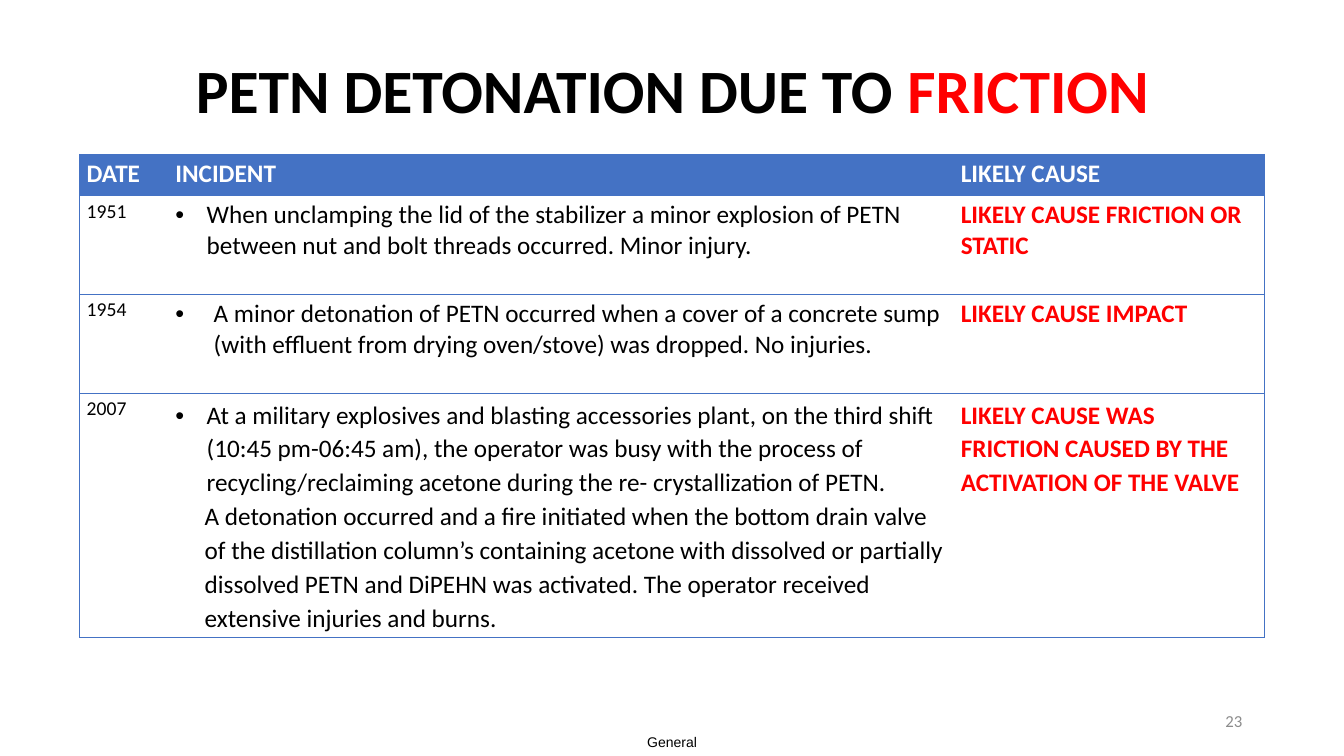
from lxml.etree import SubElement
from pptx import Presentation
from pptx.dml.color import RGBColor
from pptx.enum.text import MSO_ANCHOR, PP_ALIGN
from pptx.oxml.ns import qn
from pptx.util import Inches, Pt

BLACK = RGBColor(0x00, 0x00, 0x00)
WHITE = RGBColor(0xFF, 0xFF, 0xFF)
RED = RGBColor(0xFF, 0x00, 0x00)
BLUE = RGBColor(0x44, 0x72, 0xC4)
GRAY = RGBColor(0x8C, 0x8C, 0x8C)

TITLE = [("PETN DETONATION DUE TO ", BLACK), ("FRICTION", RED)]
HEADERS = ["DATE", "INCIDENT", "LIKELY CAUSE"]
INCIDENTS = [
    {
        "date": "1951",
        "incident": ["When unclamping the lid of the stabilizer a minor explosion of PETN "
                     "between nut and bolt threads occurred. Minor injury."],
        "cause": "LIKELY CAUSE FRICTION OR STATIC",
        "indent": 0.31, "spacing": 1.0, "height": 0.98,
    },
    {
        "date": "1954",
        "incident": ["A minor detonation of PETN occurred when a cover of a concrete sump "
                     "(with effluent from drying oven/stove) was dropped. No injuries."],
        "cause": "LIKELY CAUSE IMPACT",
        "indent": 0.38, "spacing": 1.0, "height": 0.98,
    },
    {
        "date": "2007",
        "incident": ["At a military explosives and blasting accessories plant, on the third shift "
                     "(10:45 pm-06:45 am), the operator was busy with the process of "
                     "recycling/reclaiming acetone during the re- crystallization of PETN.",
                     "A detonation occurred and a fire initiated when the bottom drain valve of the "
                     "distillation column’s containing acetone with dissolved or partially dissolved "
                     "PETN and DiPEHN was activated. The operator received extensive injuries and burns."],
        "cause": "LIKELY CAUSE WAS FRICTION CAUSED BY THE ACTIVATION OF THE VALVE",
        "indent": 0.31, "spacing": 1.1, "height": 2.42,
    },
]
COLUMN_WIDTHS = [0.88, 7.79, 3.08]
HEADER_HEIGHT = 0.41
CONTINUATION_INDENT = 0.29


def set_font(paragraph, size, color, bold=False, name="Calibri"):
    """Format every run of a paragraph alike."""
    font = paragraph.font
    font.name, font.size, font.bold = name, Pt(size), bold
    font.color.rgb = color


def set_indent(paragraph, left, bullet):
    """Indent a paragraph, hanging it from a bullet if asked."""
    properties = paragraph._p.get_or_add_pPr()
    properties.set("marL", str(Inches(left)))
    properties.set("indent", str(-Inches(left) if bullet else 0))
    if bullet:
        SubElement(properties, qn("a:buFont"), typeface="Arial")
        SubElement(properties, qn("a:buChar"), char="•")


def set_borders(cell, first, last):
    """Rule the top and bottom of a cell, and its outer sides only."""
    properties = cell._tc.get_or_add_tcPr()
    for side, visible in (("L", first), ("R", last), ("T", True), ("B", True)):
        line = SubElement(properties, qn(f"a:ln{side}"), w=str(Pt(0.5)))
        if visible:
            fill = SubElement(line, qn("a:solidFill"))
            SubElement(fill, qn("a:srgbClr"), val=str(BLUE))
        else:
            SubElement(line, qn("a:noFill"))


def add_incident_table(slide):
    """Add the table of incidents."""
    heights = [HEADER_HEIGHT] + [incident["height"] for incident in INCIDENTS]
    frame = slide.shapes.add_table(len(heights), len(COLUMN_WIDTHS), Inches(0.79), Inches(1.53),
                                   Inches(sum(COLUMN_WIDTHS)), Inches(sum(heights)))
    table = frame.table
    table.horz_banding = False
    for column, width in zip(table.columns, COLUMN_WIDTHS):
        column.width = Inches(width)
    for row_index, (row, height) in enumerate(zip(table.rows, heights)):
        row.height = Inches(height)
        for column_index, cell in enumerate(row.cells):
            cell.margin_left = cell.margin_right = Inches(0.07)
            cell.margin_top = cell.margin_bottom = Inches(0.04)
            set_borders(cell, column_index == 0, column_index == len(COLUMN_WIDTHS) - 1)
            cell.fill.solid()
            cell.fill.fore_color.rgb = WHITE if row_index else BLUE

    for column_index, header in enumerate(HEADERS):
        cell = table.cell(0, column_index)
        cell.text = header
        set_font(cell.text_frame.paragraphs[0], 18, WHITE, bold=True)

    for row_index, incident in enumerate(INCIDENTS, start=1):
        date, description, cause = table.rows[row_index].cells
        date.text = incident["date"]
        set_font(date.text_frame.paragraphs[0], 14, BLACK)
        description.text = "\n".join(incident["incident"])
        for index, paragraph in enumerate(description.text_frame.paragraphs):
            paragraph.line_spacing = incident["spacing"]
            set_indent(paragraph, CONTINUATION_INDENT if index else incident["indent"], index == 0)
            set_font(paragraph, 18, BLACK)
        cause.text = incident["cause"]
        paragraph = cause.text_frame.paragraphs[0]
        paragraph.line_spacing = incident["spacing"]
        set_font(paragraph, 18, RED, bold=True)


def add_label(slide, text, box, margin, alignment, size, color, name):
    """Add a one-line label at the foot of the slide."""
    text_frame = slide.shapes.add_textbox(*map(Inches, box)).text_frame
    text_frame.word_wrap = True
    text_frame.vertical_anchor = MSO_ANCHOR.MIDDLE
    text_frame.margin_left = text_frame.margin_right = Inches(margin)
    text_frame.margin_top = text_frame.margin_bottom = Inches(margin / 2)
    text_frame.text = text
    paragraph = text_frame.paragraphs[0]
    paragraph.alignment = alignment
    set_font(paragraph, size, color, name=name)


def main():
    """Build the slide on PETN detonations and save it."""
    presentation = Presentation()
    presentation.slide_width, presentation.slide_height = Inches(13.33), Inches(7.5)
    slide = presentation.slides.add_slide(presentation.slide_layouts[5])

    add_label(slide, "General", (6.27, 7.23, 0.79, 0.27), 0, PP_ALIGN.CENTER, 10, BLACK, "Arial")

    title = slide.shapes.title
    title.left, title.top, title.width, title.height = map(Inches, (1.67, 0.3, 10, 1.25))
    title.text_frame.vertical_anchor = MSO_ANCHOR.MIDDLE
    paragraph = title.text_frame.paragraphs[0]
    paragraph.alignment = PP_ALIGN.CENTER
    paragraph.line_spacing = 0.9
    set_font(paragraph, 44, BLACK, bold=True)
    for text, color in TITLE:
        run = paragraph.add_run()
        run.text = text
        run.font.color.rgb = color

    add_label(slide, "23", (9.42, 6.95, 3, 0.4), 0.1, PP_ALIGN.RIGHT, 12, GRAY, "Calibri")
    add_incident_table(slide)
    presentation.save("out.pptx")


if __name__ == "__main__":
    main()
